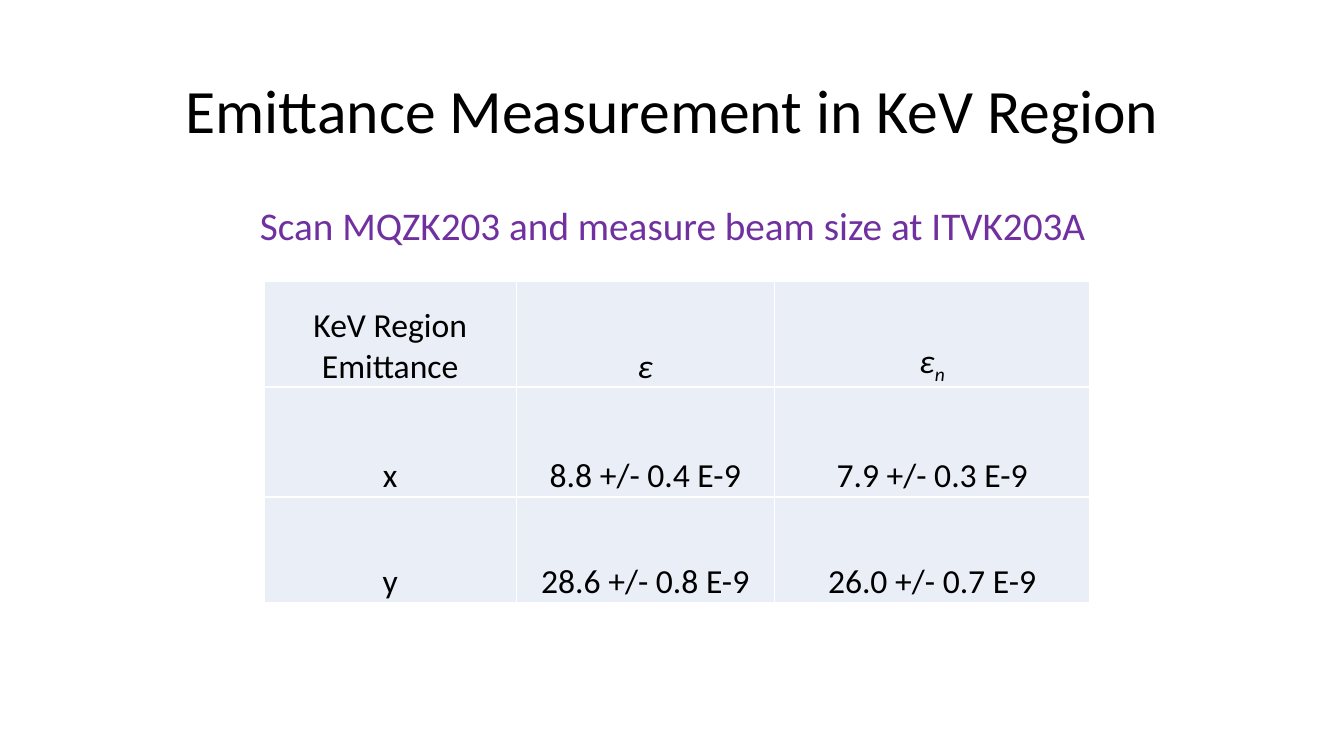
from pptx import Presentation
from pptx.dml.color import RGBColor
from pptx.enum.text import MSO_ANCHOR as Anchor, PP_ALIGN as Align
from pptx.util import Inches, Pt

BLACK = RGBColor(0x00, 0x00, 0x00)
PURPLE = RGBColor(0x70, 0x30, 0xA0)
PALE = RGBColor(0xEA, 0xEF, 0xF7)
FONT = "Calibri"

WIDE, HIGH = 13.33, 7.5
# text, top, height, size, colour, anchor, space before
HEADS = [
    ("Emittance Measurement in KeV Region",
     0.4, 1.45, 44, BLACK, Anchor.MIDDLE, 0),
    ("Scan MQZK203 and measure beam size at ITVK203A",
     2, 4.76, 28, PURPLE, Anchor.TOP, 10),
]
HEAD_LEFT, HEAD_WIDE = 0.92, 11.5

ROWS = [
    ["KeV Region\nEmittance", "ɛ", "ɛ"],
    ["x", "8.8 +/- 0.4 E-9", "7.9 +/- 0.3 E-9"],
    ["y", "28.6 +/- 0.8 E-9", "26.0 +/- 0.7 E-9"],
]
SUB = "n"
COLS = [2.5, 2.56, 3.13]
TALL = [1.05, 1.09, 1.05]
LEFT, TOP = 2.62, 2.79


def style(par, size, color):
    par.alignment = Align.CENTER
    for run in par.runs:
        run.font.name = FONT
        run.font.size = Pt(size)
        run.font.color.rgb = color


def add_head(slide, text, top, high, size, color, anchor, before):
    box = slide.shapes.add_textbox(
        Inches(HEAD_LEFT), Inches(top), Inches(HEAD_WIDE), Inches(high))
    frame = box.text_frame
    frame.word_wrap = True
    frame.vertical_anchor = anchor
    frame.text = text
    par = frame.paragraphs[0]
    par.line_spacing = 0.9
    par.space_before = Pt(before)
    style(par, size, color)


def fill_cell(cell, text):
    cell.fill.solid()
    cell.fill.fore_color.rgb = PALE
    cell.vertical_anchor = Anchor.BOTTOM
    cell.margin_left = cell.margin_right = cell.margin_top = Inches(0.01)
    cell.margin_bottom = 0
    cell.text_frame.text = text
    for par in cell.text_frame.paragraphs:
        style(par, 24, BLACK)


def add_grid(slide):
    grid = slide.shapes.add_table(
        len(ROWS), len(COLS), Inches(LEFT), Inches(TOP),
        Inches(sum(COLS)), Inches(sum(TALL))).table
    grid.first_row = grid.horz_banding = False
    for col, wide in zip(grid.columns, COLS):
        col.width = Inches(wide)
    for row, high, texts in zip(grid.rows, TALL, ROWS):
        row.height = Inches(high)
        for cell, text in zip(row.cells, texts):
            fill_cell(cell, text)
    return grid


def mark_symbols(grid):
    """Set the header symbols in italics and add the subscript."""
    plain, normal = [grid.cell(0, c).text_frame.paragraphs[0] for c in (1, 2)]
    sub = normal.add_run()
    sub.text = SUB
    style(normal, 24, BLACK)
    sub.font._element.set("baseline", "-25000")
    for run in plain.runs + normal.runs:
        run.font.italic = True


def main():
    deck = Presentation()
    deck.slide_width, deck.slide_height = Inches(WIDE), Inches(HIGH)
    slide = deck.slides.add_slide(deck.slide_layouts[6])
    for head in HEADS:
        add_head(slide, *head)
    mark_symbols(add_grid(slide))
    deck.save("out.pptx")


if __name__ == "__main__":
    main()
